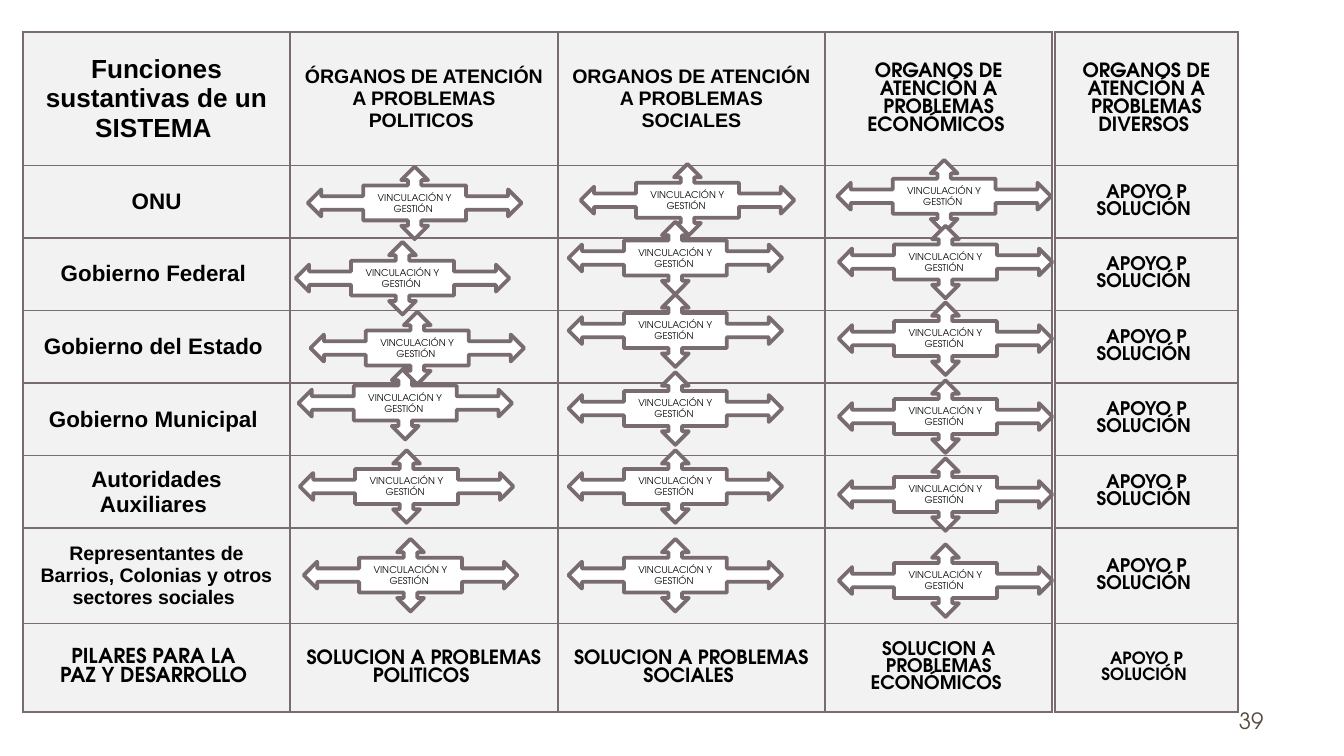
from dataclasses import dataclass

from lxml import etree
from pptx import Presentation
from pptx import util as u
from pptx.dml.color import RGBColor
from pptx.enum import shapes, text
from pptx.oxml.ns import qn


@dataclass(frozen=True)
class Theme:
    sans: str = "Arial"
    round: str = "TeX Gyre Adventor"
    ink: str = "000000"
    number: str = "564B3C"
    line: str = "786C71"
    cell: str = "F2F2F2"
    paper: str = "FFFFFF"
    title: float = 14
    level: float = 12
    pillar: float = 11
    organ: float = 10.5
    support: float = 10
    small: float = 9
    callout: float = 5


THEME = Theme()

ORGANS = [
    ("Funciones sustantivas de un SISTEMA ", THEME.title, THEME.sans),
    ("ÓRGANOS DE ATENCIÓN A PROBLEMAS POLITICOS ", THEME.organ, THEME.sans),
    ("ORGANOS DE ATENCIÓN A PROBLEMAS SOCIALES", THEME.organ, THEME.sans),
    ("ORGANOS DE ATENCIÓN A PROBLEMAS ECONÓMICOS ", THEME.organ, THEME.round),
]
LEVELS = [
    ("ONU", THEME.level, THEME.sans),
    ("Gobierno Federal ", THEME.level, THEME.sans),
    ("Gobierno del Estado ", THEME.level, THEME.sans),
    ("Gobierno Municipal ", THEME.level, THEME.sans),
    ("Autoridades Auxiliares ", THEME.level, THEME.sans),
    ("Representantes de Barrios, Colonias y otros sectores sociales ", THEME.organ, THEME.sans),
]
PILLARS = [
    ("PILARES PARA LA \nPAZ Y DESARROLLO ", THEME.pillar, THEME.round),
    ("SOLUCION A PROBLEMAS POLITICOS ", THEME.organ, THEME.round),
    ("SOLUCION A PROBLEMAS SOCIALES ", THEME.organ, THEME.round),
    ("SOLUCION A PROBLEMAS ECONÓMICOS ", THEME.support, THEME.round),
]
SUPPORT_TITLE = ("ORGANOS DE ATENCIÓN A PROBLEMAS DIVERSOS ", THEME.organ, THEME.round)
SUPPORT = "APOYO P SOLUCIÓN "
CALLOUT = "VINCULACIÓN Y GESTIÓN "
PAGE_NUMBER = "39"

PAGE_WIDTH = u.Inches(10)
PAGE_HEIGHT = PAGE_WIDTH * 9 // 16
LEFT, TOP = 0.17, 0.24
COLUMNS = [1.99, 1.99, 1.99, 1.69]
SUPPORT_LEFT, SUPPORT_COLUMNS = 7.85, [1.36]
ROWS = [0.99] + [0.54] * 5 + [0.71, 0.66]
CALLOUT_SIZE = (1.59, 0.54)

CALLOUT_SHIFTS = {
    1: [(1, 0.13, 0.01), (4, 0.06, -0.12), (5, 0.07, -0.04),
        (6, 0.10, 0.08), (3, 0.15, 0.01), (2, 0.04, 0.03)],
    2: [(6, 0.08, 0.08), (5, 0.08, -0.04), (4, 0.08, -0.08),
        (3, 0.08, -0.12), (1, 0.17, -0.01), (2, 0.08, -0.12)],
    3: [(6, 0.10, 0.12), (1, 0.09, -0.04), (2, 0.10, -0.09),
        (4, 0.10, -0.02), (5, 0.10, 0.02), (3, 0.10, -0.06)],
}


def color(value):
    return RGBColor.from_string(value)


def write(frame, words, size, font, ink=THEME.ink, bold=False, align=text.PP_ALIGN.CENTER):
    frame.word_wrap = True
    for index, line in enumerate(words.split("\n")):
        para = frame.add_paragraph() if index else frame.paragraphs[0]
        para.alignment = align
        span = para.add_run()
        span.text = line
        span.font.size = u.Pt(size)
        span.font.name = font
        span.font.bold = bold
        span.font.color.rgb = color(ink)


def style_cell(cell):
    props = cell._tc.get_or_add_tcPr()
    for side in ("a:lnL", "a:lnR", "a:lnT", "a:lnB"):
        border = etree.SubElement(props, qn(side), w=str(u.Pt(1)))
        fill = etree.SubElement(border, qn("a:solidFill"))
        etree.SubElement(fill, qn("a:srgbClr"), val=THEME.line)
    cell.fill.solid()
    cell.fill.fore_color.rgb = color(THEME.cell)
    cell.vertical_anchor = text.MSO_ANCHOR.MIDDLE
    cell.margin_left = cell.margin_right = u.Inches(0.1)
    cell.margin_top = cell.margin_bottom = u.Inches(0.07)


def add_grid(page, left, columns, content):
    box = page.shapes.add_table(
        len(ROWS), len(columns), u.Inches(left), u.Inches(TOP),
        u.Inches(sum(columns)), u.Inches(sum(ROWS)))
    table = box.table
    table.first_row = table.horz_banding = False
    for column, width in zip(table.columns, columns):
        column.width = u.Inches(width)
    for row, height, entries in zip(table.rows, ROWS, content):
        row.height = u.Inches(height)
        for cell, entry in zip(row.cells, entries):
            style_cell(cell)
            if entry:
                write(cell.text_frame, *entry, bold=True)


def add_callout(page, row, column, right, down):
    left = LEFT + sum(COLUMNS[:column]) + right
    top = TOP + sum(ROWS[:row]) + down
    box = page.shapes.add_shape(
        shapes.MSO_SHAPE.QUAD_ARROW_CALLOUT,
        *(u.Inches(length) for length in (left, top, *CALLOUT_SIZE)))
    box.shadow.inherit = False
    box.fill.solid()
    box.fill.fore_color.rgb = color(THEME.paper)
    box.line.color.rgb = color(THEME.line)
    box.line.width = u.Pt(2)
    box.text_frame.vertical_anchor = text.MSO_ANCHOR.MIDDLE
    write(box.text_frame, CALLOUT, THEME.callout, THEME.round)


def add_page_number(page):
    box = page.shapes.add_textbox(
        u.Inches(7.17), u.Inches(5.21), u.Inches(2.33), u.Inches(0.3))
    frame = box.text_frame
    frame.margin_left = frame.margin_right = u.Inches(0.1)
    frame.margin_top = frame.margin_bottom = u.Inches(0.1)
    frame.vertical_anchor = text.MSO_ANCHOR.MIDDLE
    write(frame, PAGE_NUMBER, THEME.level, THEME.round, THEME.number,
          align=text.PP_ALIGN.RIGHT)


def main():
    deck = Presentation()
    deck.slide_width, deck.slide_height = PAGE_WIDTH, PAGE_HEIGHT
    page = deck.slides.add_slide(deck.slide_layouts[6])

    add_grid(page, LEFT, COLUMNS,
             [ORGANS] + [[level, None, None, None] for level in LEVELS] + [PILLARS])
    add_page_number(page)
    for column, shifts in CALLOUT_SHIFTS.items():
        for row, right, down in shifts:
            add_callout(page, row, column, right, down)
    support = [[(SUPPORT, THEME.support, THEME.round)] for level in LEVELS]
    add_grid(page, SUPPORT_LEFT, SUPPORT_COLUMNS,
             [[SUPPORT_TITLE]] + support + [[(SUPPORT, THEME.small, THEME.round)]])
    deck.save("out.pptx")


if __name__ == "__main__":
    main()
